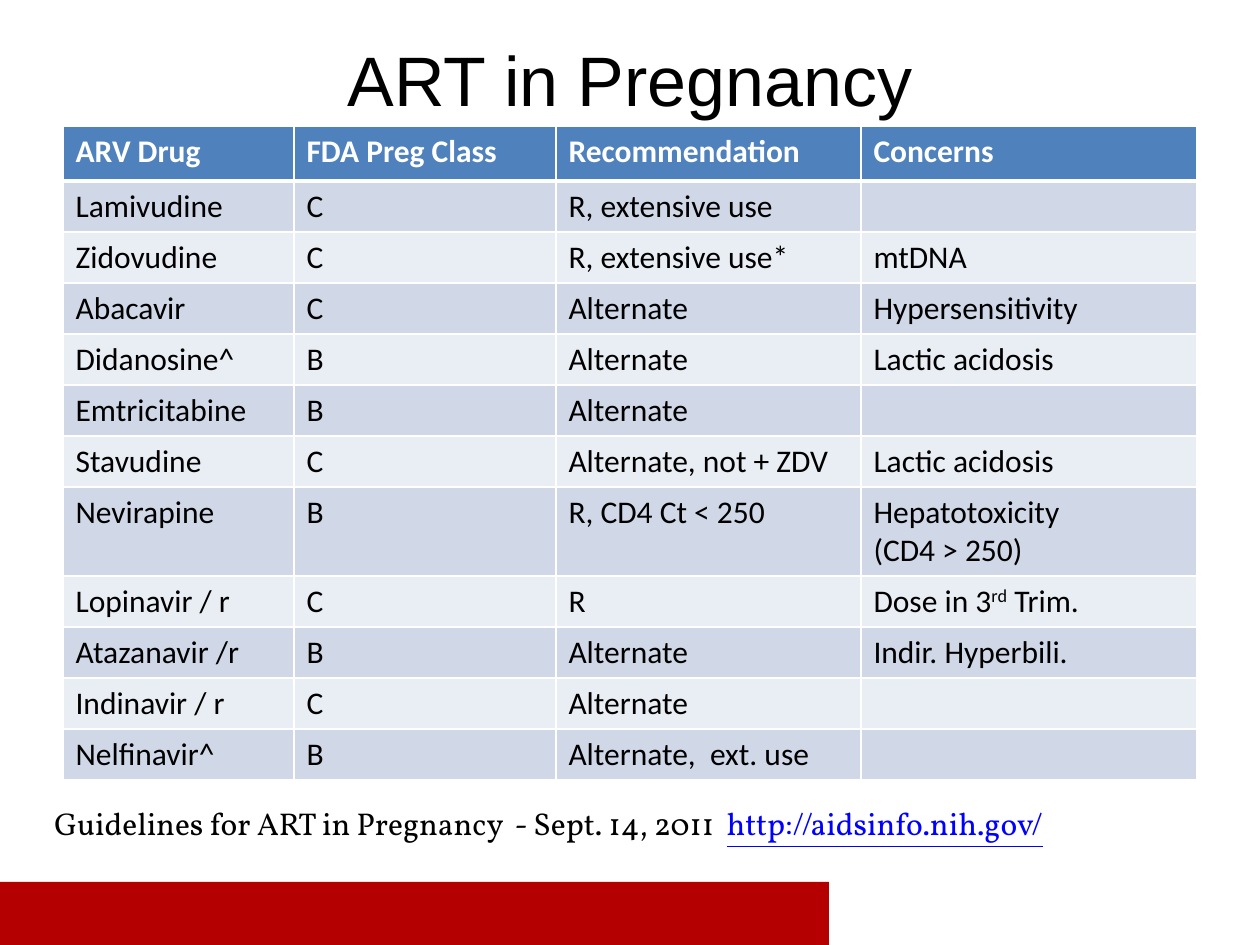
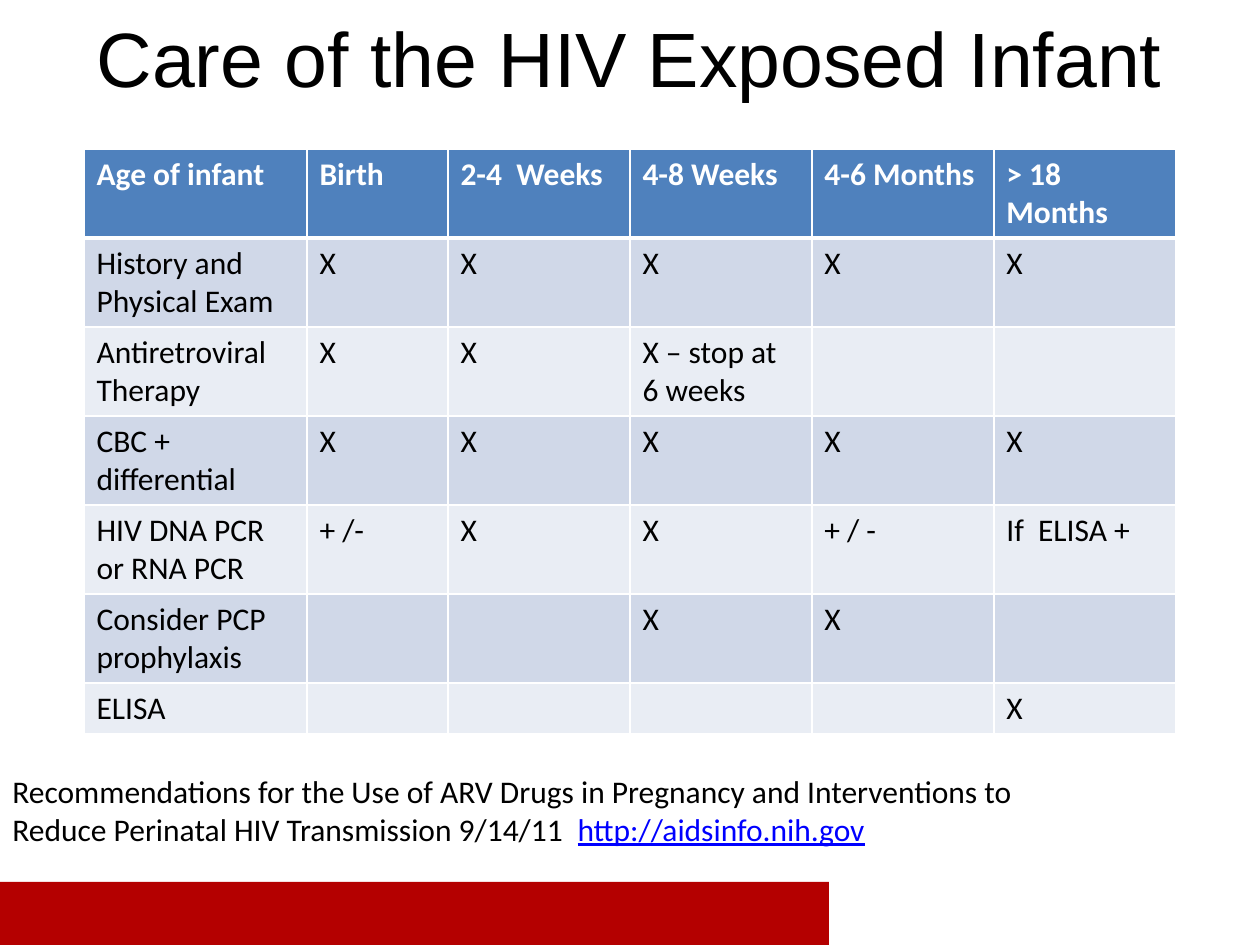
from lxml import etree
from pptx import Presentation
from pptx.dml.color import RGBColor
from pptx.enum.shapes import MSO_SHAPE
from pptx.enum.text import MSO_ANCHOR, MSO_AUTO_SIZE, PP_ALIGN
from pptx.oxml.ns import qn
from pptx.util import Pt

RECTANGLE = MSO_SHAPE.RECTANGLE
MIDDLE = MSO_ANCHOR.MIDDLE
CENTER = PP_ALIGN.CENTER
GROW = MSO_AUTO_SIZE.SHAPE_TO_FIT_TEXT

EMU_PER_PX = 914400 / 126
WIDTH, HEIGHT = 1260, 945
BLANK_LAYOUT = 6

BLACK = RGBColor(0x00, 0x00, 0x00)
WHITE = RGBColor(0xFF, 0xFF, 0xFF)
HEADER_BLUE = RGBColor(0x4F, 0x81, 0xBD)
BAND_DARK = RGBColor(0xD0, 0xD8, 0xE8)
BAND_LIGHT = RGBColor(0xE9, 0xED, 0xF4)
LINK_BLUE = RGBColor(0x00, 0x00, 0xFF)
FOOTER_RED = RGBColor(0xB4, 0x00, 0x00)

TITLE_FONT = "Arial"
TABLE_FONT = "Calibri"
BODY_SIZE = 18
THIN, THICK = 1, 3

HEADER_ROW, LINE_ROW, TWO_LINE_ROW = 55, 51, 89

DRUG_COLUMNS = [231, 262, 305, 336]
DRUG_HEIGHTS = [HEADER_ROW] + [LINE_ROW] * 6 + [TWO_LINE_ROW] + [LINE_ROW] * 4
DRUG_ROWS = [
    ["ARV Drug", "FDA Preg Class", "Recommendation", "Concerns"],
    ["Lamivudine", "C", "R, extensive use", ""],
    ["Zidovudine", "C", "R, extensive use*", "mtDNA"],
    ["Abacavir", "C", "Alternate", "Hypersensitivity"],
    ["Didanosine^", "B", "Alternate", "Lactic acidosis"],
    ["Emtricitabine", "B", "Alternate", ""],
    ["Stavudine", "C", "Alternate, not + ZDV", "Lactic acidosis"],
    ["Nevirapine", "B", "R, CD4 Ct < 250", "Hepatotoxicity\n(CD4 > 250)"],
    ["Lopinavir / r", "C", "R", "Dose in 3"],
    ["Atazanavir /r", "B", "Alternate", "Indir. Hyperbili."],
    ["Indinavir / r", "C", "Alternate", ""],
    ["Nelfinavir^", "B", "Alternate,  ext. use", ""],
]
DOSE_CELL = (8, 3)

VISIT_COLUMNS = [223, 141] + [182] * 4
VISIT_HEIGHTS = [TWO_LINE_ROW] * 6 + [LINE_ROW]
VISIT_ROWS = [
    ["Age of infant", "Birth", "2-4  Weeks", "4-8 Weeks", "4-6 Months", "> 18 Months"],
    ["History and Physical Exam", "X", "X", "X", "X", "X"],
    ["Antiretroviral Therapy", "X", "X", "X – stop at 6 weeks", "", ""],
    ["CBC + differential", "X", "X", "X", "X", "X"],
    ["HIV DNA PCR or RNA PCR", "+ /-", "X", "X", "+ / -", "If  ELISA +"],
    ["Consider PCP prophylaxis", "", "", "X", "X", ""],
    ["ELISA", "", "", "", "", "X"],
]


def px(length):
    return round(length * EMU_PER_PX)


def place(box):
    return [px(length) for length in box]


def style(run, font_name, size, color, bold=False, underline=False):
    font = run.font
    font.name = font_name
    font.size = Pt(size)
    font.color.rgb = color
    font.bold = bold
    font.underline = underline


def add_title(slide, box, wording, size):
    title = slide.shapes.add_textbox(*place(box)).text_frame
    title.word_wrap = True
    title.vertical_anchor = MIDDLE
    title.text = wording
    title.paragraphs[0].alignment = CENTER
    style(title.paragraphs[0].runs[0], TITLE_FONT, size, BLACK)


def add_source(slide, box, wording, address, font_name):
    source = slide.shapes.add_textbox(*place(box)).text_frame
    source.word_wrap = True
    source.auto_size = GROW
    source.text = wording
    citation = source.paragraphs[0]
    style(citation.runs[0], font_name, BODY_SIZE, BLACK)
    link = citation.add_run()
    link.text = address
    style(link, font_name, BODY_SIZE, LINK_BLUE, underline=True)


def add_footer_band(slide, box):
    band = slide.shapes.add_shape(RECTANGLE, *place(box))
    band.shadow.inherit = False
    band.fill.solid()
    band.fill.fore_color.rgb = FOOTER_RED
    band.line.fill.background()


def set_borders(cell, top, bottom):
    properties = cell._tc.get_or_add_tcPr()
    for side, points in (("L", THIN), ("R", THIN), ("T", top), ("B", bottom)):
        border = etree.SubElement(properties, qn(f"a:ln{side}"), w=str(Pt(points)))
        fill = etree.SubElement(border, qn("a:solidFill"))
        etree.SubElement(fill, qn("a:srgbClr"), val=str(WHITE))


def fill_cell(cell, wording, row):
    is_header = row == 0
    set_borders(cell, THICK if row == 1 else THIN, THICK if is_header else THIN)
    cell.fill.solid()
    band = BAND_DARK if row % 2 else BAND_LIGHT
    cell.fill.fore_color.rgb = HEADER_BLUE if is_header else band
    cell.text_frame.text = wording
    for paragraph in cell.text_frame.paragraphs:
        for run in paragraph.runs:
            style(run, TABLE_FONT, BODY_SIZE, WHITE if is_header else BLACK, bold=is_header)


def add_banded_table(slide, left, top, widths, heights, rows):
    box = (left, top, sum(widths), sum(heights))
    table = slide.shapes.add_table(len(rows), len(widths), *place(box)).table
    for column, width in zip(table.columns, widths):
        column.width = px(width)
    for table_row, height in zip(table.rows, heights):
        table_row.height = px(height)
    for row, wordings in enumerate(rows):
        for column, wording in enumerate(wordings):
            fill_cell(table.cell(row, column), wording, row)
    return table


def add_ordinal(cell, suffix, remainder):
    paragraph = cell.text_frame.paragraphs[0]
    for wording in (suffix, remainder):
        run = paragraph.add_run()
        run.text = wording
        style(run, TABLE_FONT, BODY_SIZE, BLACK)
        if wording == suffix:
            run._r.get_or_add_rPr().set("baseline", "30000")


def add_slide(deck):
    slide = deck.slides.add_slide(deck.slide_layouts[BLANK_LAYOUT])
    add_footer_band(slide, (0, 882, 829, 63))
    return slide


def build_pregnancy_slide(deck):
    slide = add_slide(deck)
    add_title(slide, (63, 32, 1134, 92), "ART in Pregnancy", 40)
    drugs = add_banded_table(slide, 63, 126, DRUG_COLUMNS, DRUG_HEIGHTS, DRUG_ROWS)
    add_ordinal(drugs.cell(*DOSE_CELL), "rd", " Trim.")
    add_source(
        slide,
        (42, 798, 1124, 50),
        "Guidelines for ART in Pregnancy  - Sept. 14, 2011  ",
        "http://aidsinfo.nih.gov/",
        "Vollkorn",
    )


def build_infant_slide(deck):
    slide = add_slide(deck)
    add_title(slide, (63, 0, 1134, 113), "Care of the HIV Exposed Infant", 44)
    add_banded_table(slide, 84, 149, VISIT_COLUMNS, VISIT_HEIGHTS, VISIT_ROWS)
    add_source(
        slide,
        (0, 766, 1113, 88),
        "Recommendations for the Use of ARV Drugs in Pregnancy and Interventions "
        "to Reduce Perinatal HIV Transmission 9/14/11  ",
        "http://aidsinfo.nih.gov",
        TABLE_FONT,
    )


def main():
    deck = Presentation()
    deck.slide_width, deck.slide_height = px(WIDTH), px(HEIGHT)
    build_pregnancy_slide(deck)
    build_infant_slide(deck)
    deck.save("out.pptx")


if __name__ == "__main__":
    main()
